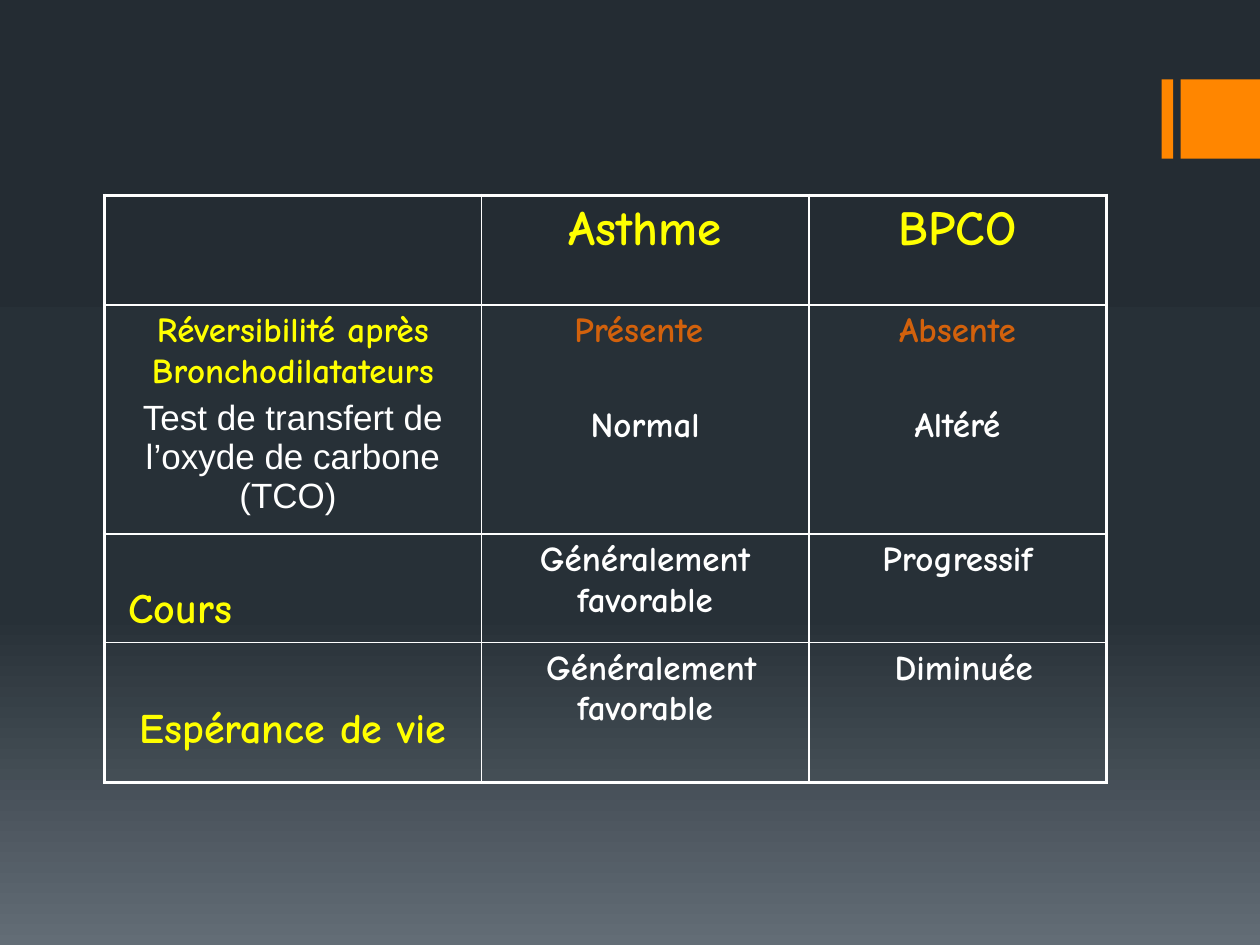
from copy import deepcopy

from lxml import etree
from pptx import Presentation
from pptx.dml.color import RGBColor
from pptx.enum import shapes, text
from pptx.oxml.ns import qn
from pptx.util import Inches, Pt

WHITE = RGBColor(0xFF, 0xFF, 0xFF)
YELLOW = RGBColor(0xFF, 0xFF, 0x00)
RUST = RGBColor(0xD2, 0x61, 0x0C)
ORANGE = RGBColor(0xFF, 0x86, 0x00)
BACKGROUND = [(0, RGBColor(0x24, 0x2C, 0x33)),
              (0.65, RGBColor(0x27, 0x30, 0x37)),
              (1, RGBColor(0x63, 0x6D, 0x76))]
COMIC = "Comic Neue"


def set_borders(cell, widths):
    """Draw white cell borders; widths in points: left, right, top, bottom."""
    tcPr = cell._tc.get_or_add_tcPr()
    for i, (side, width) in enumerate(zip("LRTB", widths)):
        ln = etree.Element(qn(f"a:ln{side}"), w=str(Pt(width)))
        fill = etree.SubElement(ln, qn("a:solidFill"))
        etree.SubElement(fill, qn("a:srgbClr"), val=str(WHITE))
        tcPr.insert(i, ln)


prs = Presentation()
prs.slide_width, prs.slide_height = Inches(10), Inches(7.5)
s = prs.slides.add_slide(prs.slide_layouts[6])

fill = s.background.fill
fill.gradient()
fill.gradient_angle = 270
stops = s.element.xpath(".//a:gsLst")[0]
stops.append(deepcopy(stops[0]))
for stop, (position, color) in zip(fill.gradient_stops, BACKGROUND):
    stop.position = position
    stop.color.rgb = color

for left, width in [(9.22, 0.09), (9.37, 0.63)]:
    sp = s.shapes.add_shape(shapes.MSO_SHAPE.RECTANGLE, Inches(left), Inches(0.63),
                            Inches(width), Inches(0.63))
    sp.shadow.inherit = False
    sp.fill.solid()
    sp.fill.fore_color.rgb = ORANGE
    sp.line.fill.background()

# Each paragraph: text, size, colour, font, space before
rows = [
    [[],
     [("Asthme", 28, YELLOW, COMIC, 0)],
     [("BPCO", 28, YELLOW, COMIC, 0)]],
    [[("Réversibilité après Bronchodilatateurs", 20, YELLOW, COMIC, 0),
      ("Test de transfert de l’oxyde de carbone (TCO) ", 20, WHITE, "Arial", 4)],
     [("Présente ", 20, RUST, COMIC, 0), ("Normal", 20, WHITE, COMIC, 31)],
     [("Absente", 20, RUST, COMIC, 0), ("Altéré", 20, WHITE, COMIC, 31)]],
    [[("Cours", 24, YELLOW, COMIC, 0)],
     [("Généralement favorable", 20, WHITE, COMIC, 0)],
     [("Progressif", 20, WHITE, COMIC, 0)]],
    [[("Espérance de vie", 24, YELLOW, COMIC, 0)],
     [(" Généralement favorable", 20, WHITE, COMIC, 0)],
     [(" Diminuée", 20, WHITE, COMIC, 0)]],
]
col_widths = [2.99, 2.6, 2.36]
row_heights = [0.87, 1.82, 0.86, 1.11]
last_row, last_col = len(rows) - 1, len(col_widths) - 1

table = s.shapes.add_table(len(rows), len(col_widths), Inches(0.83), Inches(1.55),
                           Inches(sum(col_widths)), Inches(sum(row_heights))).table
table.first_row = table.horz_banding = False
for column, width in zip(table.columns, col_widths):
    column.width = Inches(width)
for row, height in zip(table.rows, row_heights):
    row.height = Inches(height)

for i, row in enumerate(rows):
    for j, paragraphs in enumerate(row):
        cell = table.cell(i, j)
        cell.fill.background()
        on_edge = (j == 0, j == last_col, i == 0, i == last_row)
        set_borders(cell, [2.25 if edge else 1 for edge in on_edge])
        for k, (words, size, color, font, before) in enumerate(paragraphs):
            tf = cell.text_frame
            p = tf.add_paragraph() if k else tf.paragraphs[0]
            p.alignment = text.PP_ALIGN.CENTER
            p.space_before = Pt(before)
            r = p.add_run()
            r.text = words
            r.font.size = Pt(size)
            r.font.name = font
            r.font.bold = font == COMIC
            r.font.color.rgb = color

course, life = table.cell(2, 0), table.cell(3, 0)
course.margin_top, life.margin_top = Inches(0.41), Inches(0.5)
course.margin_left = Inches(0.19)
course.text_frame.paragraphs[0].alignment = text.PP_ALIGN.LEFT

prs.save("out.pptx")
